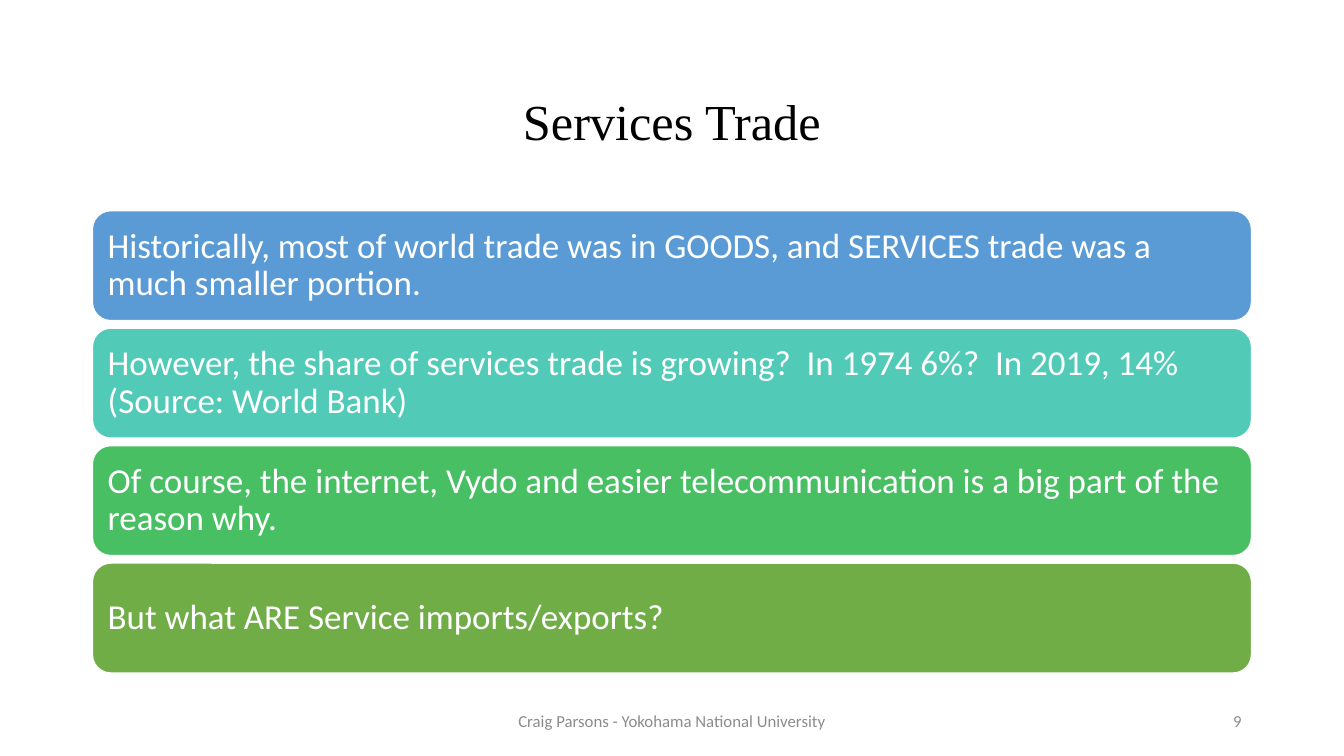
from typing import NamedTuple

from pptx import Presentation
from pptx.dml.color import RGBColor
from pptx.enum.shapes import MSO_SHAPE
from pptx.enum.text import MSO_ANCHOR, PP_ALIGN
from pptx.util import Cm, Pt

ROUNDED = MSO_SHAPE.ROUNDED_RECTANGLE
MIDDLE = MSO_ANCHOR.MIDDLE
LEFT, CENTER, RIGHT = PP_ALIGN.LEFT, PP_ALIGN.CENTER, PP_ALIGN.RIGHT

MARGIN, CONTENT_WIDTH = 2.33, 29.21
CARD_TOP, CARD_HEIGHT, CARD_PITCH = 5.31, 2.77, 2.96
FOOTER_TOP, FOOTER_HEIGHT = 17.65, 1.02
WHITE, BLACK, GRAY = "FFFFFF", "000000", "8C8C8C"


class Card(NamedTuple):
    text: str
    fill: str


class Label(NamedTuple):
    text: str
    left: float
    top: float
    width: float
    height: float
    style: dict


CARDS = [
    Card("Historically, most of world trade was in GOODS, and SERVICES trade "
         "was a much smaller portion.", "5B9BD5"),
    Card("However, the share of services trade is growing?  In 1974 6%?  "
         "In 2019, 14% (Source: World Bank)", "52CAB8"),
    Card("Of course, the internet, Vydo and easier telecommunication is a big "
         "part of the reason why.", "49BF64"),
    Card("But what ARE Service imports/exports?", "70AD47"),
]

TITLE_STYLE = dict(size=36, color=BLACK, font="Times New Roman",
                   align=CENTER, spacing=0.9)
FOOTER_STYLE = dict(size=12, color=GRAY)
LABELS = [
    Label("Services Trade", MARGIN, 1.55, CONTENT_WIDTH, 3.15, TITLE_STYLE),
    Label("Craig Parsons - Yokohama National University", 11.22, FOOTER_TOP,
          11.43, FOOTER_HEIGHT, dict(FOOTER_STYLE, align=CENTER)),
    Label("9", 23.92, FOOTER_TOP, 7.62, FOOTER_HEIGHT,
          dict(FOOTER_STYLE, align=RIGHT)),
]


def rgb(value: str) -> RGBColor:
    return RGBColor.from_string(value)


def write(shape, text: str, *, size: float, color: str, font: str = "Calibri",
          align=LEFT, spacing: float = 1.0) -> None:
    frame = shape.text_frame
    frame.word_wrap = True
    frame.vertical_anchor = MIDDLE
    para = frame.paragraphs[0]
    para.alignment = align
    para.line_spacing = spacing
    span = para.add_run()
    span.text = text
    span.font.name = font
    span.font.size = Pt(size)
    span.font.color.rgb = rgb(color)


def add_label(page, label: Label) -> None:
    box = page.shapes.add_textbox(Cm(label.left), Cm(label.top),
                                  Cm(label.width), Cm(label.height))
    write(box, label.text, **label.style)


def add_card(page, card: Card, top: float) -> None:
    box = page.shapes.add_shape(ROUNDED, Cm(MARGIN), Cm(top),
                                Cm(CONTENT_WIDTH), Cm(CARD_HEIGHT))
    box.shadow.inherit = False
    box.fill.solid()
    box.fill.fore_color.rgb = rgb(card.fill)
    box.line.color.rgb = rgb(WHITE)
    box.line.width = Pt(1)
    write(box, card.text, size=25, color=WHITE, spacing=0.9)


def main() -> None:
    deck = Presentation()
    deck.slide_width, deck.slide_height = Cm(33.87), Cm(19.05)
    page = deck.slides.add_slide(deck.slide_layouts[6])
    for label in LABELS:
        add_label(page, label)
    for row, card in enumerate(CARDS):
        add_card(page, card, CARD_TOP + row * CARD_PITCH)
    deck.save("out.pptx")


if __name__ == "__main__":
    main()
